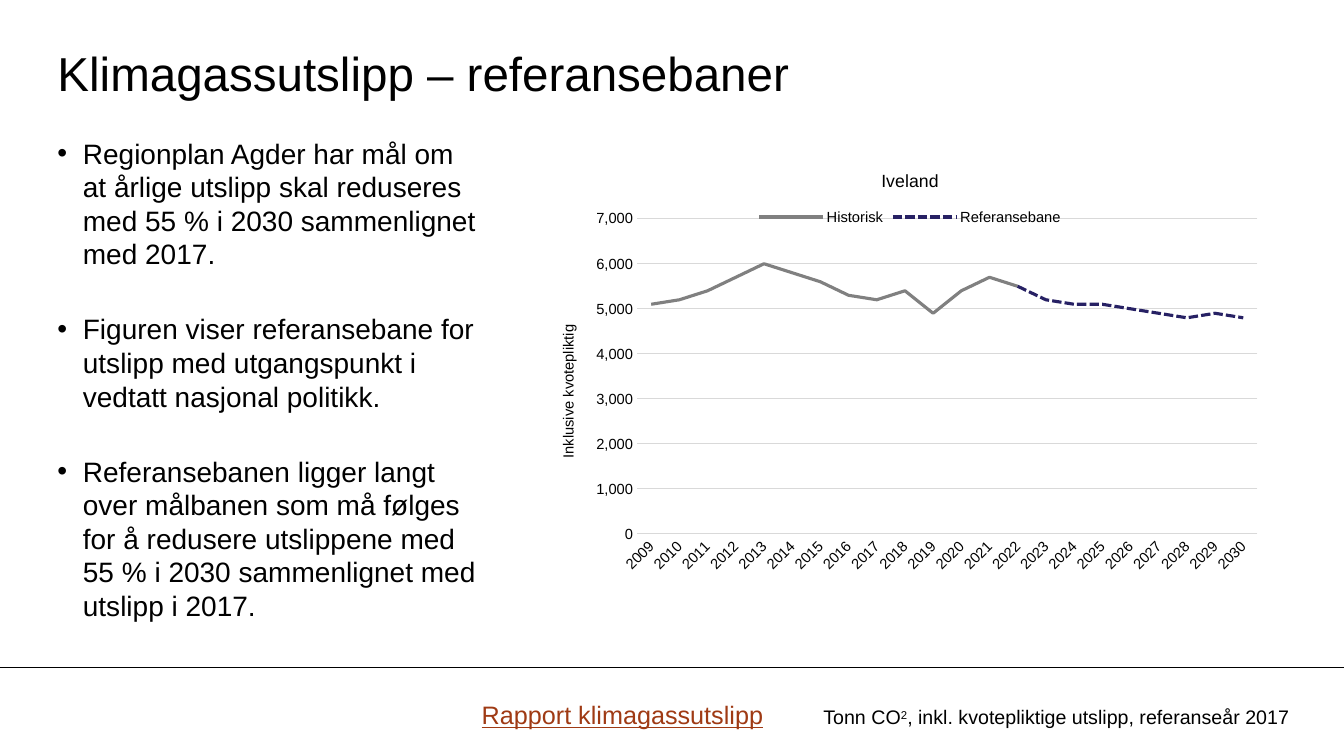
"""Build the Iveland emissions slide with its reference path chart."""
import dataclasses

import lxml.etree
import pptx
import pptx.chart.data
import pptx.dml.color
import pptx.enum.chart
import pptx.enum.dml
import pptx.enum.shapes
import pptx.enum.text
import pptx.oxml
import pptx.oxml.ns
import pptx.util

Cm = pptx.util.Cm
Pt = pptx.util.Pt
qn = pptx.oxml.ns.qn


@dataclasses.dataclass(frozen=True)
class Theme:
    """Colours, type sizes and font of the slide."""
    font: str = "Arial"
    ink: str = "000000"
    link: str = "9F3A14"
    grid: str = "D9D9D9"
    history: str = "808080"
    reference: str = "272164"
    title: float = 34
    body: float = 20
    report: float = 18
    note: float = 14
    chart_title: float = 12.6
    chart: float = 10.5


THEME = Theme()
POINTS = (
    "Regionplan Agder har mål om at årlige utslipp skal reduseres med 55 % i 2030 sammenlignet med 2017.",
    "Figuren viser referansebane for utslipp med utgangspunkt i vedtatt nasjonal politikk.",
    "Referansebanen ligger langt over målbanen som må følges for å redusere utslippene med "
    "55 % i 2030 sammenlignet med utslipp i 2017.",
)
YEARS = range(2009, 2031)
HISTORY = (5100, 5200, 5400, 5700, 6000, 5800, 5600, 5300, 5200, 5400, 4900, 5400, 5700, 5500)
REFERENCE = (5500, 5200, 5100, 5100, 5000, 4900, 4800, 4900, 4800)


def rgb(value):
    """Return a colour from its hex digits."""
    return pptx.dml.color.RGBColor.from_string(value)


def style_font(font, size, color=THEME.ink):
    """Give a font the theme's face, with a size and colour."""
    font.name = THEME.font
    font.size = Pt(size)
    font.bold = False
    font.color.rgb = rgb(color)


def add_box(page, left, top, width, height, inset=True):
    """Add a wrapping text box and return its frame."""
    frame = page.shapes.add_textbox(Cm(left), Cm(top), Cm(width), Cm(height)).text_frame
    frame.word_wrap = True
    if not inset:
        frame.margin_left = frame.margin_top = frame.margin_right = frame.margin_bottom = 0
    return frame


def add_span(para, text, size, color=THEME.ink):
    """Add one styled run to a paragraph."""
    span = para.add_run()
    span.text = text
    style_font(span.font, size, color)
    return span


def add_bullets(frame, points):
    """Fill a frame with evenly spaced bulleted paragraphs."""
    for number, point in enumerate(points):
        para = frame.add_paragraph() if number else frame.paragraphs[0]
        properties = para._p.get_or_add_pPr()
        properties.set("marL", str(Cm(0.64)))
        properties.set("indent", str(-Cm(0.64)))
        lxml.etree.SubElement(properties, qn("a:buFont"), typeface=THEME.font)
        lxml.etree.SubElement(properties, qn("a:buChar"), char="•")
        para.line_spacing = Pt(24)
        if number:
            para.space_before = Pt(29.5)
        add_span(para, point, THEME.body)


def add_rule(page, top, width):
    """Draw a thin horizontal line across the slide."""
    rule = page.shapes.add_connector(
        pptx.enum.shapes.MSO_CONNECTOR.STRAIGHT, 0, Cm(top), width, Cm(top))
    rule.line.color.rgb = rgb(THEME.ink)
    rule.line.width = Pt(0.75)
    lxml.etree.SubElement(rule._element.spPr, qn("a:effectLst"))


def add_heading(owner, text, size):
    """Title a chart or an axis and return the title's frame."""
    frame = owner.text_frame
    add_span(frame.paragraphs[0], text, size)
    return frame


def place_plot(chart, **fractions):
    """Fix the inner plot area as fractions of the chart."""
    area = chart._chartSpace.chart.plotArea
    for old in area.findall(qn("c:layout")):
        area.remove(old)
    layout = lxml.etree.Element(qn("c:layout"))
    manual = lxml.etree.SubElement(layout, qn("c:manualLayout"))
    settings = {"layoutTarget": "inner", "xMode": "edge", "yMode": "edge", **fractions}
    for name, value in settings.items():
        lxml.etree.SubElement(manual, qn("c:" + name), val=str(value))
    area.insert(0, layout)


def style_axes(chart):
    """Style both axes, their labels and the gridlines."""
    years, tonnes = chart.category_axis, chart.value_axis
    for axis in (years, tonnes):
        axis.major_tick_mark = axis.minor_tick_mark = pptx.enum.chart.XL_TICK_MARK.NONE
        style_font(axis.tick_labels.font, THEME.chart)
    tonnes.has_major_gridlines = True
    for line in (years.format.line, tonnes.major_gridlines.format.line):
        line.color.rgb = rgb(THEME.grid)
        line.width = Pt(0.75)
    years._element.txPr.find(qn("a:bodyPr")).set("rot", "-2700000")
    tonnes.format.line.fill.background()
    tonnes.minimum_scale, tonnes.maximum_scale, tonnes.major_unit = 0, 7000, 1000
    tonnes.tick_labels.number_format = "#,##0"
    tonnes.tick_labels.number_format_is_linked = False
    heading = add_heading(tonnes.axis_title, "Inklusive kvotepliktig", THEME.chart)
    heading._txBody.bodyPr.set("rot", "-5400000")
    heading._txBody.bodyPr.set("vert", "horz")


def add_emissions_chart(page):
    """Add the line chart of past and expected emissions."""
    data = pptx.chart.data.CategoryChartData(number_format="#,##0")
    data.categories = [str(year) for year in YEARS]
    data.add_series("Historisk", HISTORY + (None,) * (len(YEARS) - len(HISTORY)))
    data.add_series("Referansebane", (None,) * (len(YEARS) - len(REFERENCE)) + REFERENCE)
    chart = page.shapes.add_chart(
        pptx.enum.chart.XL_CHART_TYPE.LINE, Cm(13.46), Cm(3.84), Cm(18.95), Cm(11.38), data).chart
    style_font(chart.font, THEME.chart)
    add_heading(chart.chart_title, "Iveland", THEME.chart_title)
    chart.has_legend = True
    chart.legend.position = pptx.enum.chart.XL_LEGEND_POSITION.TOP
    chart.legend.include_in_layout = False
    style_font(chart.legend.font, THEME.chart)
    place_plot(chart, x=0.137, y=0.147, w=0.825, h=0.698)
    style_axes(chart)
    plot = chart.plots[0]
    plot.vary_by_categories = False
    for series, color in zip(plot.series, (THEME.history, THEME.reference)):
        series.smooth = False
        series.marker.style = pptx.enum.chart.XL_MARKER_STYLE.NONE
        series.format.line.color.rgb = rgb(color)
        series.format.line.width = Pt(2.25)
    plot.series[1].format.line.dash_style = pptx.enum.dml.MSO_LINE.SQUARE_DOT


def add_footer(page):
    """Add the report name and the note on units."""
    report = add_box(page, 11.89, 17.5, 8.03, 1.03).paragraphs[0]
    add_span(report, "Rapport klimagassutslipp", THEME.report, THEME.link).font.underline = True
    note = add_box(page, 20.5, 17.65, 12.93, 0.86).paragraphs[0]
    add_span(note, "Tonn CO", THEME.note)
    add_span(note, "2", THEME.note)._r.get_or_add_rPr().set("baseline", "30000")
    add_span(note, ", inkl. kvotepliktige utslipp, referanseår 2017", THEME.note)


def main():
    """Build and save the deck."""
    deck = pptx.Presentation()
    deck.slide_width, deck.slide_height = Cm(33.87), Cm(19.05)
    page = deck.slides.add_slide(deck.slide_layouts[6])
    add_rule(page, 16.81, deck.slide_width)
    title = add_box(page, 1.45, 0.86, 28.19, 1.91, inset=False)
    title.vertical_anchor = pptx.enum.text.MSO_ANCHOR.MIDDLE
    add_span(title.paragraphs[0], "Klimagassutslipp – referansebaner", THEME.title)
    add_bullets(add_box(page, 1.45, 3.43, 10.74, 12.98, inset=False), POINTS)
    add_footer(page)
    add_emissions_chart(page)
    deck.save("out.pptx")


if __name__ == "__main__":
    main()
